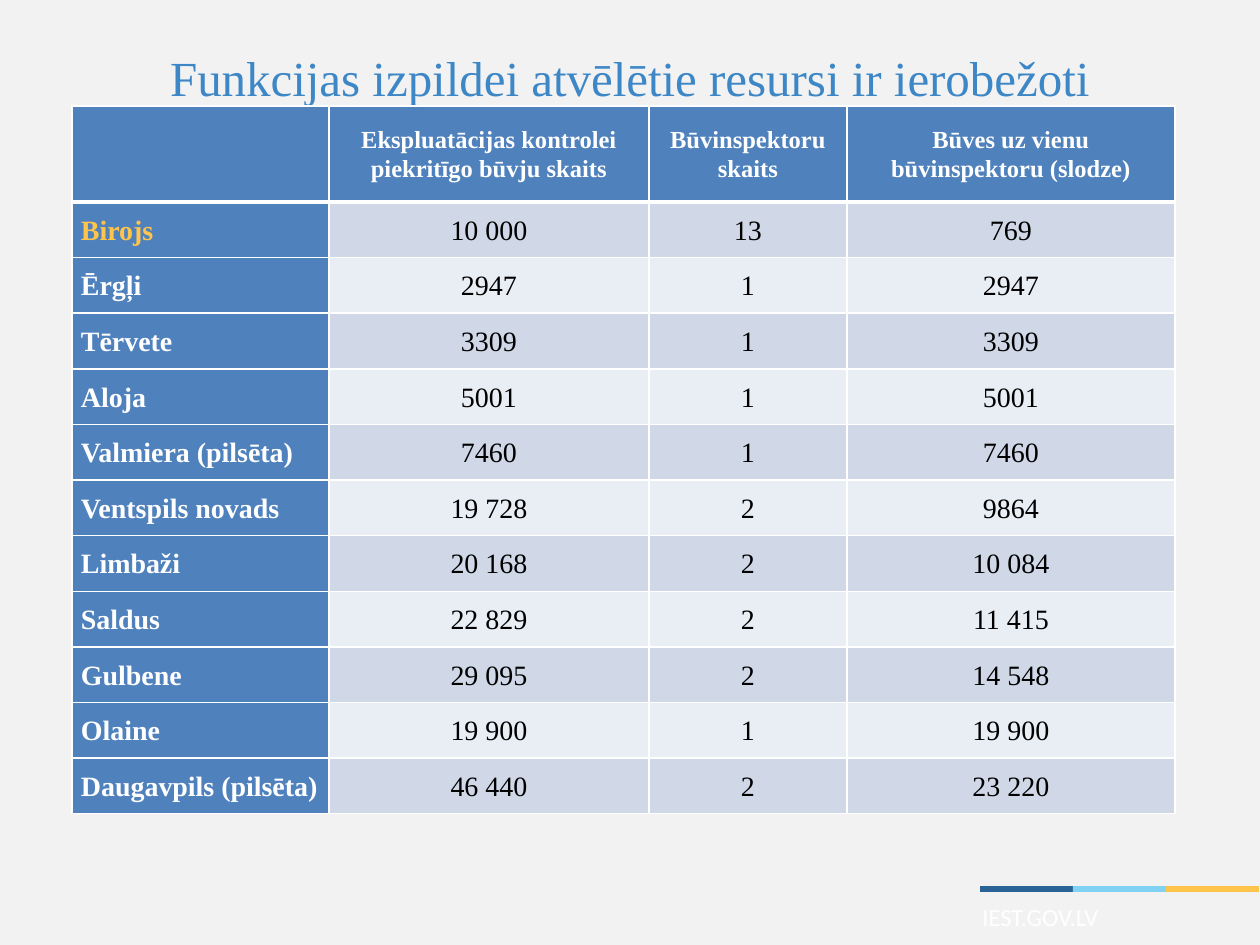
import pptx
import pptx.dml.color
import pptx.enum.shapes
import pptx.enum.text
import pptx.oxml
import pptx.oxml.ns
import pptx.util

RGBColor = pptx.dml.color.RGBColor
ALIGN = pptx.enum.text.PP_ALIGN
MIDDLE = pptx.enum.text.MSO_ANCHOR.MIDDLE

PAPER = RGBColor(0xF2, 0xF2, 0xF2)
TITLE_BLUE = RGBColor(0x3D, 0x87, 0xC7)
HEADER_BLUE = RGBColor(0x4F, 0x81, 0xBD)
BAND_DARK = RGBColor(0xD0, 0xD8, 0xE8)
BAND_LIGHT = RGBColor(0xE9, 0xED, 0xF4)
NAVY = RGBColor(0x2A, 0x64, 0x96)
SKY = RGBColor(0x7F, 0xD2, 0xF1)
AMBER = RGBColor(0xFF, 0xC5, 0x4B)
WHITE = RGBColor(0xFF, 0xFF, 0xFF)
BLACK = RGBColor(0, 0, 0)

SERIF = "Times New Roman"
EMU_PER_PX = 914400 / 126
COLUMN_WIDTHS = (257, 320, 198, 328)
HEADER_HEIGHT = 96
BODY_HEIGHT = 612

ROWS = (
    ("", "Ekspluatācijas kontrolei piekritīgo būvju skaits",
     "Būvinspektoru skaits", "Būves uz vienu būvinspektoru (slodze)"),
    ("Birojs", "10 000", "13", "769"),
    ("Ērgļi", "2947", "1", "2947"),
    ("Tērvete", "3309", "1", "3309"),
    ("Aloja", "5001", "1", "5001"),
    ("Valmiera (pilsēta)", "7460", "1", "7460"),
    ("Ventspils novads", "19 728", "2", "9864"),
    ("Limbaži", "20 168", "2", "10 084"),
    ("Saldus", "22 829", "2", "11 415"),
    ("Gulbene", "29 095", "2", "14 548"),
    ("Olaine", "19 900", "1", "19 900"),
    ("Daugavpils (pilsēta)", "46 440", "2", "23 220"),
)


def px(length):
    """Turn pixels into EMU."""
    return pptx.util.Emu(round(length * EMU_PER_PX))


def style_text(frame, size, color, align, font=SERIF, bold=False):
    """Format every paragraph and run of a text frame."""
    for para in frame.paragraphs:
        para.alignment = align
        for span in para.runs:
            span.font.name = font
            span.font.size = pptx.util.Pt(size)
            span.font.bold = bold
            span.font.color.rgb = color


def set_title(page, text):
    """Fill and place the title placeholder."""
    title = page.shapes.title
    title.left, title.top, title.width, title.height = px(63), px(38), px(1134), px(77)
    title.text_frame.text = text
    title.text_frame.vertical_anchor = MIDDLE
    style_text(title.text_frame, 28, TITLE_BLUE, ALIGN.CENTER)


def set_borders(cell, top, bottom):
    """Draw white cell borders, with top and bottom widths in points."""
    properties = cell._tc.get_or_add_tcPr()
    widths = {"lnL": 1, "lnR": 1, "lnT": top, "lnB": bottom}
    for place, (tag, width) in enumerate(widths.items()):
        properties.insert(place, pptx.oxml.parse_xml(
            f'<a:{tag} {pptx.oxml.ns.nsdecls("a")} w="{pptx.util.Pt(width)}">'
            f'<a:solidFill><a:srgbClr val="{WHITE}"/></a:solidFill></a:{tag}>'))


def fill_cell(cell, text, row, column):
    """Write one table cell in the style of its row and column."""
    heading = row == 0 or column == 0
    band = BAND_DARK if row % 2 else BAND_LIGHT
    cell.fill.solid()
    cell.fill.fore_color.rgb = HEADER_BLUE if heading else band
    set_borders(cell, top=3 if row == 1 else 1, bottom=3 if row == 0 else 1)
    cell.vertical_anchor = MIDDLE
    cell.margin_left = cell.margin_right = px(9)
    cell.margin_top = cell.margin_bottom = 0
    cell.text_frame.text = text
    cell.text_frame.paragraphs[0].line_spacing = 1.07
    color = WHITE if heading else BLACK
    if text == "Birojs":
        color = AMBER
    align = ALIGN.JUSTIFY if row and column == 0 else ALIGN.CENTER
    style_text(cell.text_frame, 16 if row else 14, color, align, bold=heading)


def add_workload_table(page):
    """Add the table of buildings per inspector."""
    frame = page.shapes.add_table(
        len(ROWS), len(COLUMN_WIDTHS), px(72), px(106),
        px(sum(COLUMN_WIDTHS)), px(HEADER_HEIGHT + BODY_HEIGHT))
    table = frame.table
    table.first_col = True
    for column, width in zip(table.columns, COLUMN_WIDTHS):
        column.width = px(width)
    for number, values in enumerate(ROWS):
        height = BODY_HEIGHT / (len(ROWS) - 1) if number else HEADER_HEIGHT
        table.rows[number].height = px(height)
        for column, text in enumerate(values):
            fill_cell(table.cell(number, column), text, number, column)


def add_stripe(page, left, color):
    """Add one segment of the footer stripe."""
    stripe = page.shapes.add_shape(
        pptx.enum.shapes.MSO_SHAPE.RECTANGLE, px(left), px(886), px(93), px(6))
    stripe.shadow.inherit = False
    stripe.fill.solid()
    stripe.fill.fore_color.rgb = color
    stripe.line.fill.background()


def add_footer(page, text):
    """Add the web address under the stripe."""
    box = page.shapes.add_textbox(px(970), px(898), px(280), px(38))
    box.text_frame.word_wrap = True
    box.text_frame.vertical_anchor = MIDDLE
    box.text_frame.text = text
    style_text(box.text_frame, 14, WHITE, ALIGN.LEFT, font="Calibri")


def main():
    """Build and save the slide."""
    deck = pptx.Presentation()
    deck.slide_width, deck.slide_height = px(1260), px(945)
    page = deck.slides.add_slide(deck.slide_layouts.get_by_name("Title Only"))
    page.background.fill.solid()
    page.background.fill.fore_color.rgb = PAPER
    for place, color in enumerate((NAVY, SKY, AMBER)):
        add_stripe(page, 980 + 93 * place, color)
    add_footer(page, "IEST.GOV.LV")
    set_title(page, "Funkcijas izpildei atvēlētie resursi ir ierobežoti")
    add_workload_table(page)
    deck.save("out.pptx")


if __name__ == "__main__":
    main()
